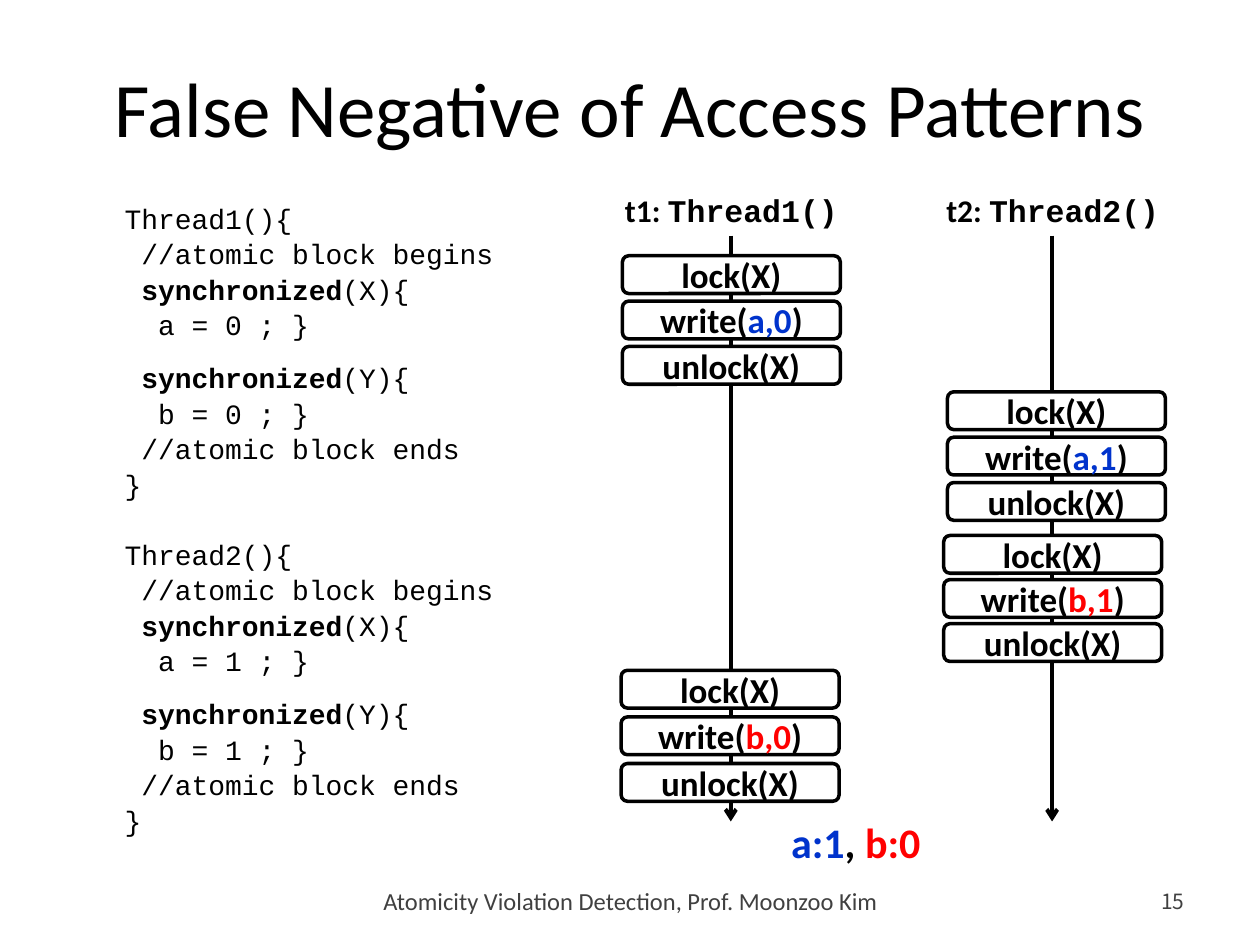
from lxml import etree
from pptx import Presentation
from pptx import util as u
from pptx.dml.color import RGBColor
from pptx.enum import shapes, text
from pptx.oxml.ns import qn

BLACK, WHITE, BLUE, RED, GRAY = "000000", "FFFFFF", "0033CC", "FF0000", "404040"
SANS, MONO = "Calibri", "Courier New"
LEFT, CENTER, RIGHT = text.PP_ALIGN.LEFT, text.PP_ALIGN.CENTER, text.PP_ALIGN.RIGHT
TOP, MIDDLE = text.MSO_ANCHOR.TOP, text.MSO_ANCHOR.MIDDLE


def color(value):
    """Turn a hex string into a colour."""
    return RGBColor.from_string(value)


def write(para, content, size=20, font=SANS, fill=BLACK, bold=False, align=LEFT):
    """Write a string, or a list of (string, overrides), into a paragraph."""
    para.alignment = align
    pieces = [(content, {})] if isinstance(content, str) else content
    for words, changes in pieces:
        style = {"font": font, "fill": fill, "bold": bold, **changes}
        span = para.add_run()
        span.text = words
        span.font.size = u.Pt(size)
        span.font.name = style["font"]
        span.font.bold = style["bold"]
        span.font.color.rgb = color(style["fill"])


def add_text(page, place, content, anchor=TOP, **style):
    """Add a wrapped text box with one paragraph."""
    box = page.shapes.add_textbox(*map(u.Inches, place))
    box.text_frame.word_wrap = True
    box.text_frame.vertical_anchor = anchor
    write(box.text_frame.paragraphs[0], content, **style)


def code_lines(number):
    """Return (space before, content) for each code line of one thread."""
    def sync(lock):
        return [(" ", {}), ("synchronized", {"bold": True}), (f"({lock}){{", {})]

    value = number - 1
    return [
        (1.1 if number == 1 else 20.8, f"Thread{number}(){{"),
        (1.1, " //atomic block begins"),
        (1.1, sync("X")),
        (1.1, f"  a = {value} ; }}"),
        (11, sync("Y")),
        (1.1, f"  b = {value} ; }}"),
        (1.1, " //atomic block ends"),
        (1.1, "}"),
    ]


def add_code(page, place):
    """Add the code of both threads."""
    box = page.shapes.add_textbox(*map(u.Inches, place))
    frame = box.text_frame
    frame.word_wrap = True
    for index, (gap, content) in enumerate(code_lines(1) + code_lines(2)):
        para = frame.add_paragraph() if index else frame.paragraphs[0]
        para.space_before = u.Pt(gap)
        write(para, content, size=16, font=MONO)


def add_timeline(page, x, number):
    """Add a thread heading and its downward arrow."""
    heading = [(f"t{number}: ", {}), (f"Thread{number}()", {"font": MONO})]
    add_text(page, (x - 1.13, 1.47, 2.27, 0.4), heading, size=18, bold=True, align=CENTER)
    arrow = page.shapes.add_connector(
        shapes.MSO_CONNECTOR.STRAIGHT, *map(u.Inches, (x, 1.87, x, 6.52)))
    arrow.line.color.rgb = color(BLACK)
    arrow.line.width = u.Pt(2.25)
    etree.SubElement(arrow.line._get_or_add_ln(), qn("a:tailEnd"), type="arrow")
    etree.SubElement(arrow._element.spPr, qn("a:effectLst"))


def add_step(page, x, y, content):
    """Add one rounded operation box."""
    box = page.shapes.add_shape(
        shapes.MSO_SHAPE.ROUNDED_RECTANGLE, *map(u.Inches, (x, y, 1.73, 0.3)))
    box.shadow.inherit = False
    box.fill.solid()
    box.fill.fore_color.rgb = color(WHITE)
    box.line.color.rgb = color(BLACK)
    box.line.width = u.Pt(2)
    box.text_frame.vertical_anchor = MIDDLE
    write(box.text_frame.paragraphs[0], content, bold=True, align=CENTER)


def add_critical_section(page, x, y, pitch, access, fill):
    """Add the lock, write and unlock steps of one access."""
    steps = ["lock(X)", [("write(", {}), (access, {"fill": fill}), (")", {})], "unlock(X)"]
    for index, content in enumerate(steps):
        add_step(page, x, y + index * pitch, content)


def main():
    """Build the slide and save it."""
    deck = Presentation()
    deck.slide_width, deck.slide_height = u.Inches(10), u.Inches(7.5)
    page = deck.slides.add_slide(deck.slide_layouts[6])
    add_text(page, (0.5, 0.22, 9, 1.25), "False Negative of Access Patterns",
             anchor=MIDDLE, size=44, align=CENTER)
    add_code(page, (0.89, 1.55, 3.78, 5.07))
    add_text(page, (1.61, 6.95, 6.79, 0.4), "Atomicity Violation Detection, Prof. Moonzoo Kim",
             anchor=MIDDLE, size=14, fill=GRAY, align=CENTER)
    add_text(page, (8.94, 6.95, 0.56, 0.4), "15", anchor=MIDDLE, size=12,
             font="Noto Sans CJK KR", fill=GRAY, align=RIGHT)
    for number, x in enumerate((5.8, 8.35), start=1):
        add_timeline(page, x, number)
    for section in (
        (4.94, 2.03, 0.36, "a,0", BLUE),
        (7.52, 3.11, 0.36, "a,1", BLUE),
        (7.49, 4.25, 0.35, "b,1", RED),
        (4.93, 5.32, 0.37, "b,0", RED),
    ):
        add_critical_section(page, *section)
    result = [("a:1", {"fill": BLUE}), (", ", {}), ("b:0", {"fill": RED})]
    add_text(page, (6.18, 6.43, 2.42, 0.5), result, size=24, bold=True)
    deck.save("out.pptx")


if __name__ == "__main__":
    main()
